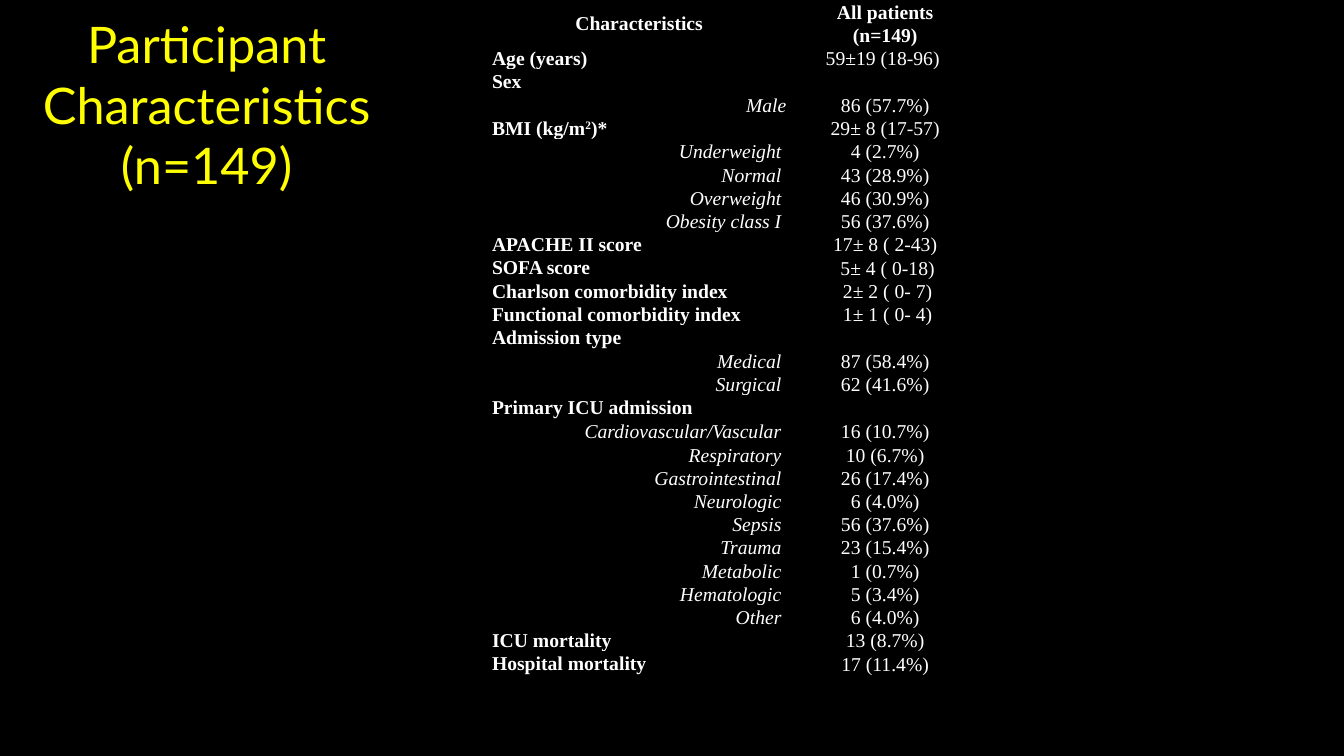
from dataclasses import dataclass

from lxml import etree
from pptx import Presentation
from pptx.dml.color import RGBColor
from pptx.enum.text import MSO_ANCHOR, MSO_AUTO_SIZE, PP_ALIGN
from pptx.oxml.ns import qn
from pptx.util import Inches, Pt

LEFT, CENTER, RIGHT = PP_ALIGN.LEFT, PP_ALIGN.CENTER, PP_ALIGN.RIGHT
TOP, MIDDLE, BOTTOM = MSO_ANCHOR.TOP, MSO_ANCHOR.MIDDLE, MSO_ANCHOR.BOTTOM
NO_FIT = MSO_AUTO_SIZE.NONE
TITLE_ONLY = 5


@dataclass(frozen=True)
class Theme:
    back: str = "000000"
    title: str = "FFFF00"
    text: str = "FFFFFF"
    title_font: str = "Lato"
    text_font: str = "Times New Roman"
    title_size: int = 36
    text_size: int = 14
    spacing: float = 1.07


# Each group: label, value, and its indented rows; ^ marks superscript
GROUPS = [
    ("Age (years)", "59±19 (18-96) ", []),
    ("Sex", "", [("Male", "86 (57.7%)")]),
    ("BMI (kg/m^2^)*", "29± 8 (17-57)", [
        ("Underweight ", "4 (2.7%)"),
        ("Normal ", "43 (28.9%)"),
        ("Overweight ", "46 (30.9%)"),
        ("Obesity class I ", "56 (37.6%)"),
    ]),
    ("APACHE II score", "17± 8 ( 2-43)", []),
    ("SOFA score", " 5± 4 ( 0-18)", []),
    ("Charlson comorbidity index", " 2± 2 ( 0- 7)", []),
    ("Functional comorbidity index", " 1± 1 ( 0- 4)", []),
    ("Admission type", "", [
        ("Medical ", "87 (58.4%)"),
        ("Surgical ", "62 (41.6%)"),
    ]),
    ("Primary ICU admission", "", [
        ("Cardiovascular/Vascular ", "16 (10.7%)"),
        ("Respiratory ", "10 (6.7%)"),
        ("Gastrointestinal ", "26 (17.4%)"),
        ("Neurologic ", "6 (4.0%)"),
        ("Sepsis ", "56 (37.6%)"),
        ("Trauma ", "23 (15.4%)"),
        ("Metabolic ", "1 (0.7%)"),
        ("Hematologic ", "5 (3.4%)"),
        ("Other ", "6 (4.0%)"),
    ]),
    ("ICU mortality", "13 (8.7%)", []),
    ("Hospital mortality", "17 (11.4%)", []),
]

# Cell formats: alignment, anchor, font values
HEAD = (CENTER, MIDDLE, {"bold": True, "italic": False})
MAIN = (LEFT, TOP, {"bold": True, "italic": False})
SUB = (RIGHT, BOTTOM, {"bold": False, "italic": True})
VALUE = (CENTER, MIDDLE, {"bold": False, "italic": False})


def apply(target, values):
    for name, value in values.items():
        setattr(target, name, value)


class Deck:
    def __init__(self, theme):
        self.theme = theme
        self.file = Presentation()
        apply(self.file, {"slide_width": Inches(13.33), "slide_height": Inches(7.5)})
        self.slide = self.file.slides.add_slide(self.file.slide_layouts[TITLE_ONLY])
        fill = self.slide.background.fill
        fill.solid()
        fill.fore_color.rgb = RGBColor.from_string(theme.back)

    def style(self, font, name, size, color, **more):
        apply(font, {"name": name, "size": Pt(size), **more})
        font.color.rgb = RGBColor.from_string(color)

    def title(self, text, left, top, width, height):
        shape = self.slide.shapes.title
        apply(shape, {"left": Inches(left), "top": Inches(top),
                      "width": Inches(width), "height": Inches(height)})
        frame = shape.text_frame
        apply(frame, {"text": text, "word_wrap": True, "auto_size": NO_FIT,
                      "vertical_anchor": MIDDLE})
        par = frame.paragraphs[0]
        par.alignment = CENTER
        look = self.theme
        self.style(par.runs[0].font, look.title_font, look.title_size, look.title)

    def border(self, cell):
        props = cell._tc.get_or_add_tcPr()
        for side in ("lnL", "lnR", "lnT", "lnB"):
            line = etree.SubElement(props, qn(f"a:{side}"), w=str(Pt(1)))
            fill = etree.SubElement(line, qn("a:solidFill"))
            etree.SubElement(fill, qn("a:srgbClr"), val=self.theme.back)

    def cell(self, cell, text, kind):
        align, anchor, weight = kind
        look = self.theme
        apply(cell, {"margin_left": Inches(0.05), "margin_right": Inches(0.05),
                     "margin_top": 0, "margin_bottom": 0, "vertical_anchor": anchor})
        self.border(cell)
        cell.fill.background()
        frame = cell.text_frame
        for i, line in enumerate(text.split("\n")):
            par = frame.add_paragraph() if i else frame.paragraphs[0]
            apply(par, {"alignment": align, "line_spacing": look.spacing})
            if not line:
                # An empty cell keeps the row as low as the others
                etree.SubElement(par._p, qn("a:endParaRPr"), sz=str(look.text_size * 100))
                continue
            for j, part in enumerate(line.split("^")):
                run = par.add_run()
                run.text = part
                self.style(run.font, look.text_font, look.text_size, look.text, **weight)
                if j % 2:
                    run._r.get_or_add_rPr().set("baseline", "30000")

    def table(self, rows, left, top, widths, head, step):
        heights = [head] + [step] * (len(rows) - 1)
        frame = self.slide.shapes.add_table(
            len(rows), len(widths), Inches(left), Inches(top),
            Inches(sum(widths)), Inches(sum(heights)))
        table = frame.table
        apply(table, {"first_row": False, "horz_banding": False})
        for col, width in zip(table.columns, widths):
            col.width = Inches(width)
        for row, height, cells in zip(table.rows, heights, rows):
            row.height = Inches(height)
            for cell, (text, kind) in zip(row.cells, cells):
                self.cell(cell, text, kind)


def main():
    deck = Deck(Theme())

    # Title
    deck.title("Participant Characteristics (n=149)", 0.27, 0.41, 3.56, 1.25)

    # Patient table
    rows = [[("Characteristics", HEAD), ("All patients\n(n=149)", HEAD)]]
    for label, value, subs in GROUPS:
        rows.append([(label, MAIN), (value, VALUE)])
        rows += [[(name, SUB), (count, VALUE)] for name, count in subs]
    deck.table(rows, 4.83, 0, [3.02, 1.86], 0.38, 0.18)

    deck.file.save("out.pptx")


if __name__ == "__main__":
    main()
